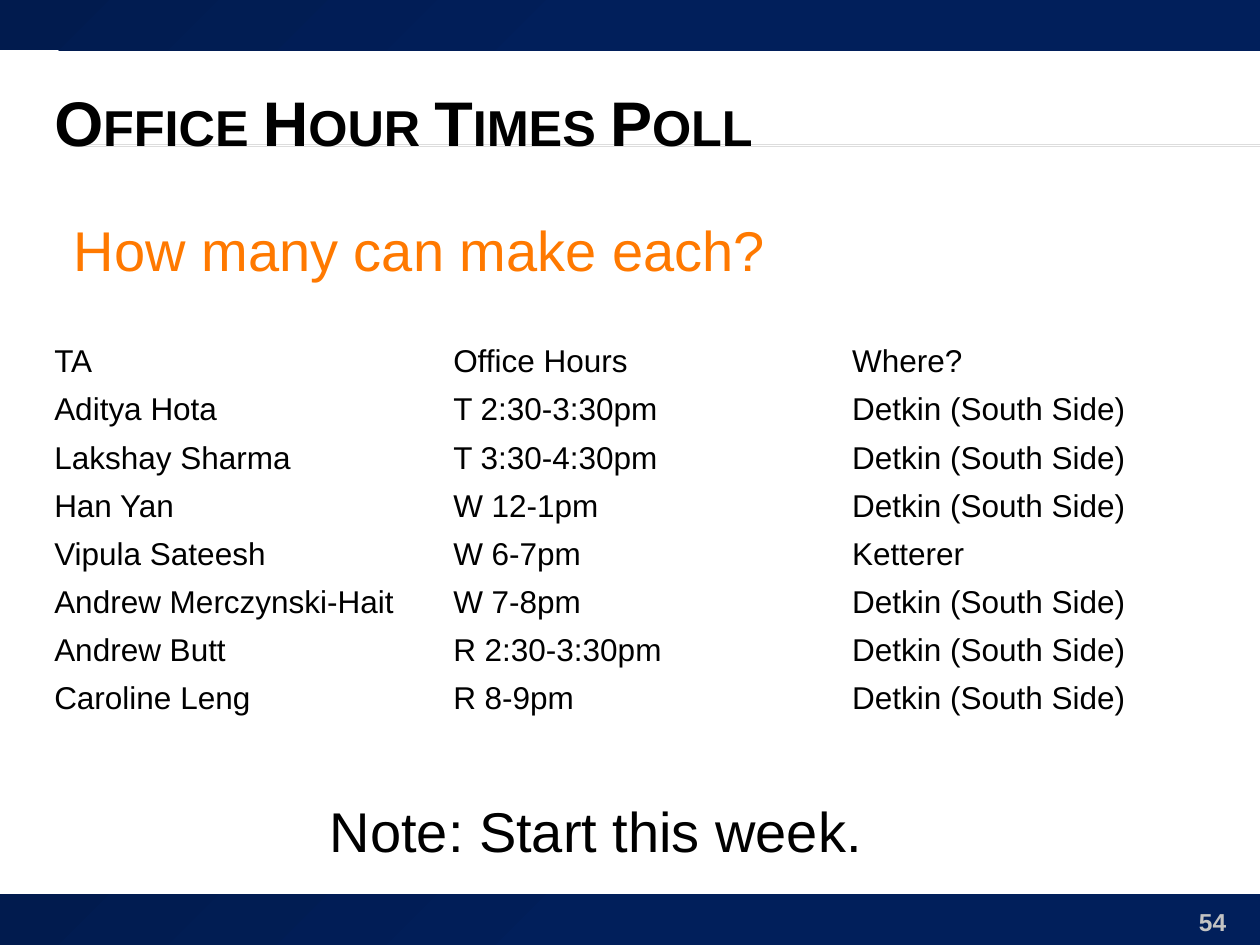
from lxml.etree import SubElement
from pptx import Presentation
from pptx.dml.color import RGBColor
from pptx.enum.shapes import MSO_CONNECTOR as Connector, MSO_SHAPE as Shape
from pptx.enum.text import MSO_ANCHOR as Anchor, MSO_AUTO_SIZE as AutoSize, PP_ALIGN as Align
from pptx.oxml.ns import qn
from pptx.util import Cm, Pt

WIDTH, HEIGHT, BAND = 25.4, 19.05, 1.02
ROW_HEIGHT = 0.97
TITLE = "Office Hour Times Poll"
TITLE_FORMAT = {"size": 36, "bold": True}
TITLE_PLACE = (0.84, 1.27, 24.13, 2.34)
TABLE_PLACE = (0.84, 6.81, 24.13)
RULES = (2.92, 2.95)
SOUTH = "Detkin (South Side)"
SCHEDULE = [
    ("TA", "Office Hours", "Where?"),
    ("Aditya Hota", "T 2:30-3:30pm", SOUTH),
    ("Lakshay Sharma", "T 3:30-4:30pm", SOUTH),
    ("Han Yan", "W 12-1pm", SOUTH),
    ("Vipula Sateesh", "W 6-7pm", "Ketterer"),
    ("Andrew Merczynski-Hait", "W 7-8pm", SOUTH),
    ("Andrew Butt", "R 2:30-3:30pm", SOUTH),
    ("Caroline Leng", "R 8-9pm", SOUTH),
]
# text, place, format, alignment
NOTES = [
    ("Note: Start this week.", (6.4, 15.93, 11.33, 1.63), {"size": 32}, Align.LEFT),
    ("How many can make each?", (1.24, 4.22, 14.55, 1.63),
     {"size": 32, "color": "FF7900"}, Align.LEFT),
]
PAGE_NUMBER = ("54", (22.86, 18.16, 2.11, 0.69),
               {"size": 14, "bold": True, "color": "C3C3C3"}, Align.RIGHT)


def rgb(value):
    return RGBColor.from_string(value)


def write(frame, text, style, align=Align.LEFT):
    para = frame.paragraphs[0]
    para.alignment = align
    span = para.add_run()
    span.text = text
    style = {"name": "Arial", "bold": False, "color": "000000", **style}
    span.font.color.rgb = rgb(style.pop("color"))
    style["size"] = Pt(style["size"])
    for name, value in style.items():
        setattr(span.font, name, value)
    return span


def add_rule(page, y):
    rule = page.shapes.add_connector(Connector.STRAIGHT, Cm(1.42), Cm(y), Cm(WIDTH), Cm(y))
    rule.line.color.rgb = rgb("DDDDDD")
    rule.line.width = Pt(0.75)
    SubElement(rule._element.spPr, qn("a:effectLst"))


def add_band(page, top):
    band = page.shapes.add_shape(Shape.RECTANGLE, 0, Cm(top), Cm(WIDTH), Cm(BAND))
    band.shadow.inherit = False
    band.line.fill.background()
    band.fill.gradient()
    band.fill.gradient_angle = 315
    stops = ((0, "011B4E"), (0.5, "011F5B"))
    for stop, (position, color) in zip(band.fill.gradient_stops, stops):
        stop.position = position
        stop.color.rgb = rgb(color)


def add_title(page):
    title = page.shapes.title
    page.shapes._spTree.append(title._element)  # in front of the rules
    title.left, title.top, title.width, title.height = map(Cm, TITLE_PLACE)
    title.text_frame.vertical_anchor = Anchor.MIDDLE
    span = write(title.text_frame, TITLE, TITLE_FORMAT)
    span._r.get_or_add_rPr().set("cap", "small")


def add_text(page, text, place, style, align, fit=AutoSize.NONE):
    frame = page.shapes.add_textbox(*map(Cm, place)).text_frame
    frame.auto_size = fit
    frame.word_wrap = fit == AutoSize.NONE
    write(frame, text, style, align)


def add_schedule(page):
    rows, columns = len(SCHEDULE), len(SCHEDULE[0])
    table = page.shapes.add_table(rows, columns, *map(Cm, TABLE_PLACE),
                                  Cm(ROW_HEIGHT * rows)).table
    table.first_row = table.horz_banding = False
    for row, texts in zip(table.rows, SCHEDULE):
        row.height = Cm(ROW_HEIGHT)
        for cell, text in zip(row.cells, texts):
            cell.fill.background()
            cell.vertical_anchor = Anchor.MIDDLE
            cell.margin_top = cell.margin_bottom = Cm(0.1)
            write(cell.text_frame, text, {"size": 18})


def main():
    deck = Presentation()
    deck.slide_width, deck.slide_height = Cm(WIDTH), Cm(HEIGHT)
    page = deck.slides.add_slide(deck.slide_layouts[5])
    for y in RULES:
        add_rule(page, y)
    for top in (0, HEIGHT - BAND):
        add_band(page, top)
    add_title(page)
    add_text(page, *PAGE_NUMBER)
    add_schedule(page)
    for note in NOTES:
        add_text(page, *note, fit=AutoSize.SHAPE_TO_FIT_TEXT)
    deck.save("out.pptx")


if __name__ == "__main__":
    main()
